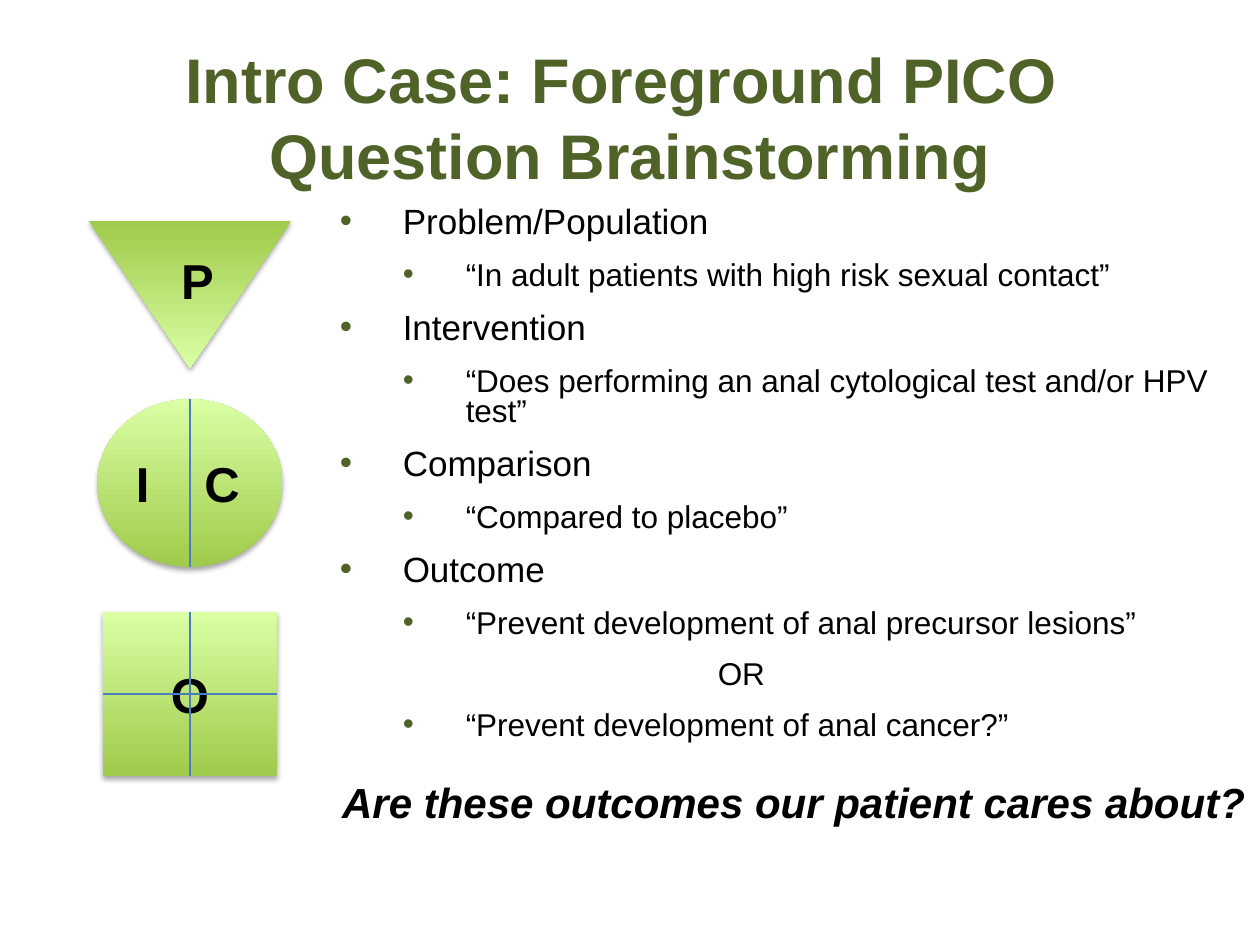
from lxml import etree
from pptx import Presentation
from pptx.dml.color import RGBColor
from pptx.enum.shapes import MSO_CONNECTOR, MSO_SHAPE
from pptx.enum.text import MSO_ANCHOR, PP_ALIGN
from pptx.oxml import parse_xml
from pptx.oxml.ns import nsdecls, qn
from pptx.util import Cm, Pt

TRIANGLE, OVAL, RECT = MSO_SHAPE.ISOSCELES_TRIANGLE, MSO_SHAPE.OVAL, MSO_SHAPE.RECTANGLE
STRAIGHT = MSO_CONNECTOR.STRAIGHT
LEFT, CENTER = PP_ALIGN.LEFT, PP_ALIGN.CENTER
TOP, MIDDLE = MSO_ANCHOR.TOP, MSO_ANCHOR.MIDDLE

AXIS = 3.83    # centre line of the P, I/C and O symbols
INDENT = 1.27  # step of each bullet level
OR_INDENT = 7.62

SHADOW = (
    f'<a:effectLst {nsdecls("a")}><a:outerShdw blurRad="39370" dist="22860" '
    'dir="5400000" rotWithShape="0"><a:srgbClr val="000000">'
    '<a:alpha val="35000"/></a:srgbClr></a:outerShdw></a:effectLst>'
)

# (level, text); level None is the unbulleted line between two outcomes
BULLETS = [
    (0, "Problem/Population"),
    (1, "“In adult patients with high risk sexual contact”"),
    (0, "Intervention"),
    (1, "“Does performing an anal cytological test and/or HPV test”"),
    (0, "Comparison"),
    (1, "“Compared to placebo”"),
    (0, "Outcome"),
    (1, "“Prevent development of anal precursor lesions”"),
    (None, "OR"),
    (1, "“Prevent development of anal cancer?”"),
]


def rgb(value):
    return RGBColor.from_string(value)


def write(p, text, size=28, color="000000", bold=False, italic=False, align=LEFT):
    p.text = text
    p.alignment = align
    for r in p.runs:
        r.font.name = "Arial"
        r.font.size = Pt(size)
        r.font.bold = bold
        r.font.italic = italic
        r.font.color.rgb = rgb(color)


class Deck:
    green, dark, light, line_color = "4F6228", "A0CA4A", "DAFFA5", "4B7EBC"

    def __init__(self):
        self.prs = Presentation()
        self.prs.slide_width, self.prs.slide_height = Cm(25.4), Cm(19.05)
        self.s = self.prs.slides.add_slide(self.prs.slide_layouts[5])

    def title(self, text, x, y, w, h):
        sp = self.s.shapes.title
        sp.left, sp.top, sp.width, sp.height = Cm(x), Cm(y), Cm(w), Cm(h)
        sp.text_frame.vertical_anchor = MIDDLE
        write(sp.text_frame.paragraphs[0], text, size=36, color=self.green,
              bold=True, align=CENTER)

    def box(self, x, y, w, h):
        tf = self.s.shapes.add_textbox(Cm(x), Cm(y), Cm(w), Cm(h)).text_frame
        tf.word_wrap = True
        tf.vertical_anchor = TOP
        return tf

    def label(self, text, x, y, w, h, **fmt):
        write(self.box(x, y, w, h).paragraphs[0], text, bold=True, **fmt)

    def bullets(self, items, x, y, w, h):
        tf = self.box(x, y, w, h)
        for i, (level, text) in enumerate(items):
            p = tf.add_paragraph() if i else tf.paragraphs[0]
            pPr = p._p.get_or_add_pPr()
            if level is None:
                pPr.set("marL", str(Cm(OR_INDENT)))
            else:
                pPr.set("marL", str(Cm(INDENT * (level + 1))))
                pPr.set("indent", str(-Cm(INDENT)))
                clr = etree.SubElement(pPr, qn("a:buClr"))
                etree.SubElement(clr, qn("a:srgbClr"), val=self.green)
                etree.SubElement(pPr, qn("a:buFont"), typeface="Arial")
                etree.SubElement(pPr, qn("a:buChar"), char="•")
            p.level = 0 if level == 0 else 1
            p.line_spacing, p.space_after = 0.8, Pt(12)
            write(p, text, size=20 if level == 0 else 18)

    def symbol(self, kind, y, w, h, text="", rotation=0):
        """Gradient shape centred on the symbol axis."""
        sp = self.s.shapes.add_shape(kind, Cm(AXIS - w / 2), Cm(y), Cm(w), Cm(h))
        sp.rotation = rotation
        sp.line.fill.background()
        sp.fill.gradient()
        sp.fill.gradient_angle = 90
        for stop, color, position in zip(sp.fill.gradient_stops,
                                         (self.dark, self.light), (0, 1)):
            stop.color.rgb, stop.position = rgb(color), position
        sp._element.spPr.append(parse_xml(SHADOW))
        if text:
            sp.text_frame.vertical_anchor = MIDDLE
            write(sp.text_frame.paragraphs[0], text, bold=True, align=CENTER)
        return sp

    def split_text(self, sp, text, inset, tab):
        """Left-aligned text whose second part starts at a tab stop."""
        tf = sp.text_frame
        tf.vertical_anchor = MIDDLE
        tf.margin_left, tf.margin_right = Cm(inset), 0
        p = tf.paragraphs[0]
        tabs = etree.SubElement(p._p.get_or_add_pPr(), qn("a:tabLst"))
        etree.SubElement(tabs, qn("a:tab"), pos=str(Cm(tab)), algn="l")
        write(p, text, bold=True)

    def line(self, x1, y1, x2, y2):
        c = self.s.shapes.add_connector(STRAIGHT, Cm(x1), Cm(y1), Cm(x2), Cm(y2))
        c.line.color.rgb = rgb(self.line_color)
        c.line.width = Pt(0.75)
        etree.SubElement(c._element.spPr, qn("a:effectLst"))


def main():
    deck = Deck()
    deck.title("Intro Case: Foreground PICO \vQuestion Brainstorming", 0, 0.76, 25.4, 3.18)
    deck.bullets(BULLETS, 6.6, 4.06, 18.29, 12.09)

    # Symbols: P triangle, I/C circle, O square
    circle_y, circle_h = 8.05, 3.38
    square_y, square_w, square_h = 12.34, 3.5, 3.3
    deck.symbol(TRIANGLE, 4.45, 4.09, 2.97, rotation=180)
    circle = deck.symbol(OVAL, circle_y, 3.73, circle_h)
    deck.split_text(circle, "I\tC", inset=0.23, tab=1.38)
    deck.symbol(RECT, square_y, square_w, square_h, "O")
    deck.label("P", 3.4, 4.93, 1.2, 1.45)

    # Dividing lines
    for y, h in ((circle_y, circle_h), (square_y, square_h)):
        deck.line(AXIS, y, AXIS, y + h)
    middle = square_y + square_h / 2
    deck.line(AXIS - square_w / 2, middle, AXIS + square_w / 2, middle)

    # Closing question
    deck.label("Are these outcomes our patient cares about?", 6.6, 15.52, 18.8, 1.27,
               size=24, italic=True, align=CENTER)
    deck.prs.save("out.pptx")


if __name__ == "__main__":
    main()
